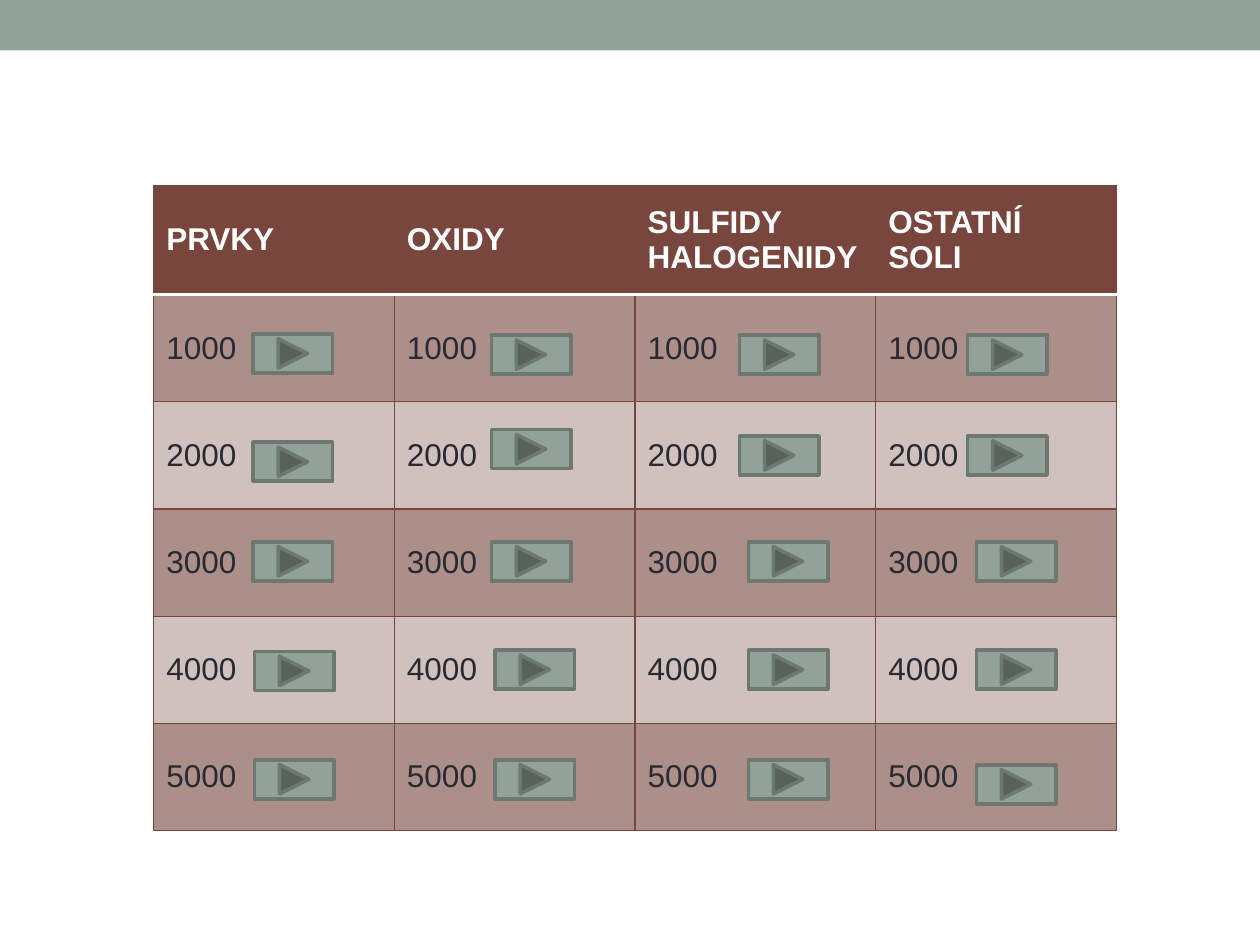
from dataclasses import dataclass

from lxml import etree
from pptx import Presentation
from pptx.dml.color import RGBColor
from pptx.enum.shapes import MSO_SHAPE
from pptx.enum.text import MSO_ANCHOR
from pptx.oxml.ns import qn
from pptx.util import Inches, Pt

RECTANGLE = MSO_SHAPE.RECTANGLE
FORWARD_BUTTON = MSO_SHAPE.ACTION_BUTTON_FORWARD_OR_NEXT
MIDDLE = MSO_ANCHOR.MIDDLE

HEADINGS = ["PRVKY", "OXIDY", "SULFIDY\nHALOGENIDY", "OSTATNÍ\nSOLI"]
POINTS = ["1000", "2000", "3000", "4000", "5000"]
TABLE_LEFT, TABLE_TOP = 1.22, 1.47
COLUMN_WIDTH = 1.91
HEADER_HEIGHT, ROW_HEIGHT = 0.87, 0.85
BUTTON_SIZE = (0.63, 0.31)
# Hand-placed button corners (left, top), one list per table column.
BUTTON_CORNERS = [
    [(2.01, 2.65), (2.01, 3.51), (2.01, 4.3), (2.02, 5.17), (2.02, 6.03)],
    [(3.9, 2.66), (3.9, 3.41), (3.9, 4.3), (3.93, 5.16), (3.93, 6.03)],
    [(5.87, 2.66), (5.87, 3.46), (5.94, 4.3), (5.94, 5.16), (5.94, 6.03)],
    [(7.68, 2.66), (7.68, 3.46), (7.75, 4.3), (7.75, 5.16), (7.75, 6.07)],
]


@dataclass(frozen=True)
class Theme:
    font: str = "Arial"
    text_size: float = 18
    grid_width: float = 0.75
    heavy_width: float = 2.08
    white: str = "FFFFFF"
    ink: str = "292934"
    sage: str = "93A299"
    sage_dark: str = "6D7871"
    brown: str = "79463D"
    band_dark: str = "AD8F8A"
    band_light: str = "D0C1BE"


class SlideBuilder:
    def __init__(self, slide, theme):
        self.slide = slide
        self.theme = theme

    def shape(self, kind, left, top, width, height, fill, line=None):
        shape = self.slide.shapes.add_shape(
            kind, Inches(left), Inches(top), Inches(width), Inches(height))
        shape.shadow.inherit = False
        shape.fill.solid()
        shape.fill.fore_color.rgb = RGBColor.from_string(fill)
        if line:
            shape.line.color.rgb = RGBColor.from_string(line)
            shape.line.width = Pt(self.theme.heavy_width)
        else:
            shape.line.fill.background()

    def table(self, rows):
        theme = self.theme
        column_count = len(rows[0])
        height = HEADER_HEIGHT + ROW_HEIGHT * (len(rows) - 1)
        table = self.slide.shapes.add_table(
            len(rows), column_count, Inches(TABLE_LEFT), Inches(TABLE_TOP),
            Inches(COLUMN_WIDTH * column_count), Inches(height)).table
        for column in table.columns:
            column.width = Inches(COLUMN_WIDTH)
        for row_index, texts in enumerate(rows):
            is_header = row_index == 0
            table.rows[row_index].height = Inches(
                HEADER_HEIGHT if is_header else ROW_HEIGHT)
            band = theme.band_dark if row_index % 2 else theme.band_light
            fill = theme.brown if is_header else band
            text_color = theme.white if is_header else theme.ink
            grid = (theme.brown, theme.grid_width)
            heavy = (theme.white, theme.heavy_width)
            borders = {
                "a:lnL": grid,
                "a:lnR": grid,
                "a:lnT": heavy if row_index == 1 else grid,
                "a:lnB": heavy if is_header else grid,
            }
            for column_index, text in enumerate(texts):
                cell = table.cell(row_index, column_index)
                self.cell_text(cell, text, text_color, is_header)
                self.cell_borders(cell, borders)
                cell.fill.solid()
                cell.fill.fore_color.rgb = RGBColor.from_string(fill)

    def cell_text(self, cell, text, color, bold):
        cell.text = text
        cell.vertical_anchor = MIDDLE
        font_format = {"name": self.theme.font,
                       "size": Pt(self.theme.text_size), "bold": bold}
        for paragraph in cell.text_frame.paragraphs:
            for run in paragraph.runs:
                for name, value in font_format.items():
                    setattr(run.font, name, value)
                run.font.color.rgb = RGBColor.from_string(color)

    def cell_borders(self, cell, borders):
        """Draw the borders; call before filling, as the schema puts lines first."""
        properties = cell._tc.get_or_add_tcPr()
        for tag, (color, width) in borders.items():
            line = etree.SubElement(properties, qn(tag), w=str(int(Pt(width))))
            fill = etree.SubElement(line, qn("a:solidFill"))
            etree.SubElement(fill, qn("a:srgbClr"), val=color)


def main():
    presentation = Presentation()
    presentation.slide_width = Inches(10)
    presentation.slide_height = Inches(7.5)
    theme = Theme()
    blank_layout = presentation.slide_layouts[6]
    builder = SlideBuilder(presentation.slides.add_slide(blank_layout), theme)

    builder.shape(RECTANGLE, 0, 0, 10, 0.4, theme.sage)
    builder.table([HEADINGS] + [[points] * len(HEADINGS) for points in POINTS])
    for column_corners in BUTTON_CORNERS:
        for left, top in column_corners:
            builder.shape(FORWARD_BUTTON, left, top, *BUTTON_SIZE,
                          theme.sage, theme.sage_dark)
    presentation.save("out.pptx")


if __name__ == "__main__":
    main()
